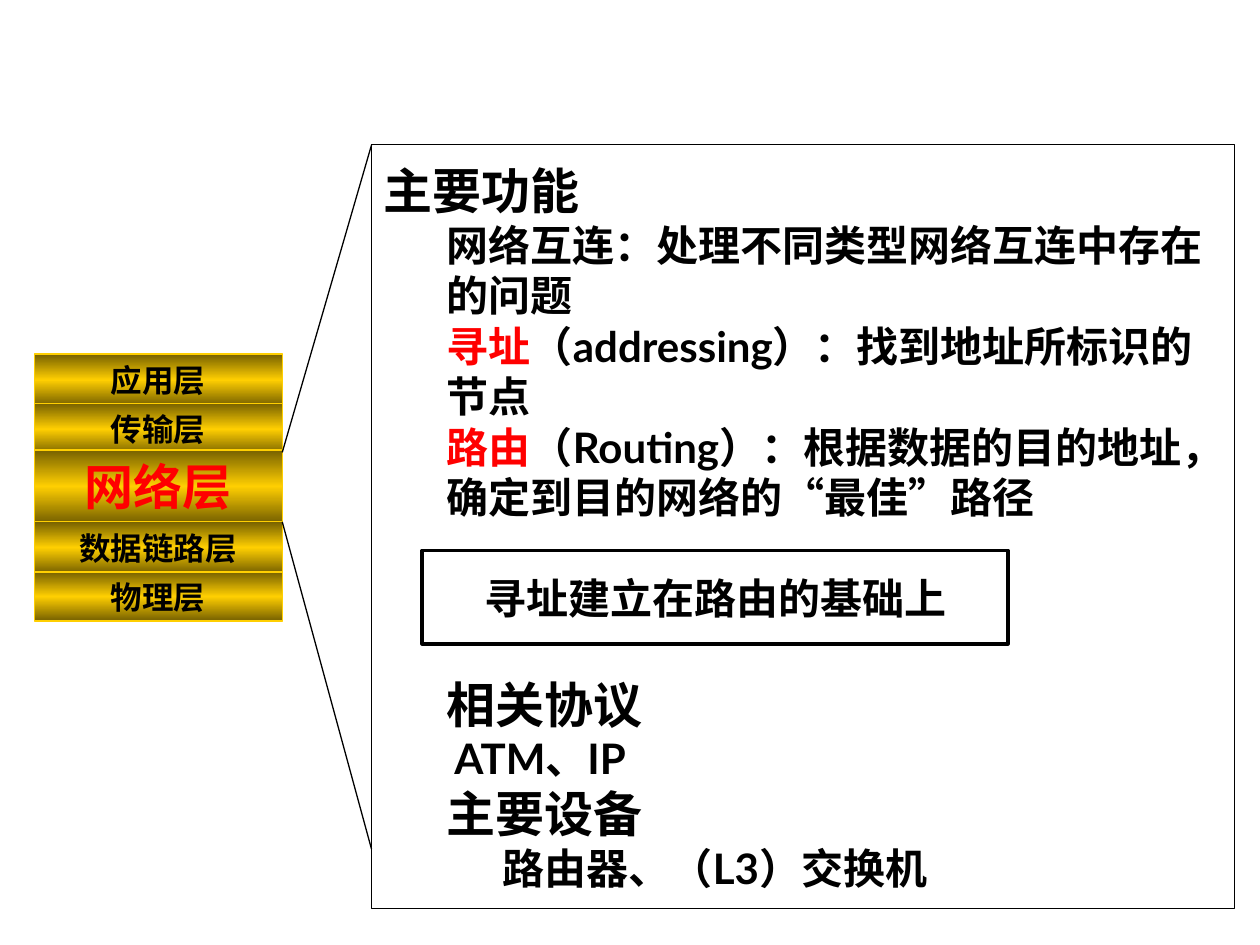
import copy

import pptx
import pptx.dml.color
import pptx.enum.shapes
import pptx.enum.text
import pptx.oxml
import pptx.oxml.ns
import pptx.util

Cm, Pt = pptx.util.Cm, pptx.util.Pt
ALIGN = pptx.enum.text.PP_ALIGN

THEME = {
    "font": "Lato", "quote_font": "Arial",
    "ink": "000000", "accent": "FF0000",
    "gold": "FFCF01", "dark_gold": "766000",
    "label": 18, "body": 24, "heading": 28,
}

# Layer stack: name, top, height (cm), size, colour
STACK_LEFT, STACK_WIDTH = 0.69, 5.0
LAYERS = [
    ("应用层", 7.14, 1.04, "label", "ink"),
    ("传输层", 8.13, 1.04, "label", "ink"),
    ("网络层", 9.07, 1.47, "heading", "accent"),
    ("数据链路层", 10.52, 1.04, "label", "ink"),
    ("物理层", 11.53, 0.99, "label", "ink"),
]

PANEL = (7.49, 2.92, 17.4, 15.39)
CALLOUT = (8.51, 11.1, 11.81, 1.88)
CALLOUT_TEXT = "寻址建立在路由的基础上"
CALLOUT_GAP = 87  # points left free in the panel text

# Panel text: size, indent (cm), space before (pt), runs of (text, colour, font)
DETAILS = [
    ("heading", 0, 0, [("主要功能", "ink", "font")]),
    ("body", 1.27, 0, [("网络互连：处理不同类型网络互连中存在的问题", "ink", "font")]),
    ("body", 1.27, 0, [("寻址", "accent", "font"),
                       ("（addressing）：找到地址所标识的节点", "ink", "font")]),
    ("body", 1.27, 0, [("路由", "accent", "font"),
                       ("（Routing）：根据数据的目的地址，确定到目的网络的", "ink", "font"),
                       ("“", "ink", "quote_font"), ("最佳", "ink", "font"),
                       ("”", "ink", "quote_font"), ("路径", "ink", "font")]),
    ("heading", 1.27, CALLOUT_GAP, [("相关协议", "ink", "font")]),
    ("body", 1.42, 0, [("ATM、IP", "ink", "font")]),
    ("heading", 1.27, 0, [("主要设备", "ink", "font")]),
    ("body", 2.4, 0, [("路由器、（L3）交换机", "ink", "font")]),
]

# Lines from the network layer to the panel: start, end (cm)
ZOOM_LINES = [((5.69, 9.12), (7.49, 2.92)), ((5.69, 10.52), (7.49, 17.12))]


def rgb(key):
    return pptx.dml.color.RGBColor.from_string(THEME[key])


def add_run(p, text, size, color="ink", font="font"):
    r = p.add_run()
    r.text = text
    r.font.name = THEME[font]
    r.font.size = Pt(THEME[size])
    r.font.bold = True
    r.font.color.rgb = rgb(color)


def add_box(slide, box, line_color, line_width):
    s = slide.shapes.add_shape(pptx.enum.shapes.MSO_SHAPE.RECTANGLE, *map(Cm, box))
    s.shadow.inherit = False
    s.fill.background()
    s.line.color.rgb = rgb(line_color)
    s.line.width = Pt(line_width)
    tf = s.text_frame
    tf.word_wrap = True
    tf.vertical_anchor = pptx.enum.text.MSO_ANCHOR.MIDDLE
    return s


def fill_gold(s):
    """Vertical gradient, dark at both edges and bright in the middle."""
    s.fill.gradient()
    s.fill.gradient_angle = 90
    edge, middle = s.fill.gradient_stops
    edge.color.rgb, edge.position = rgb("dark_gold"), 0
    middle.color.rgb, middle.position = rgb("gold"), 0.5
    stops = s._element.spPr.find(".//" + pptx.oxml.ns.qn("a:gsLst"))
    last = copy.deepcopy(stops[0])
    last.set("pos", "100000")
    stops.append(last)


def add_layer(slide, name, top, height, size, color):
    s = add_box(slide, (STACK_LEFT, top, STACK_WIDTH, height), "gold", 0.75)
    fill_gold(s)
    p = s.text_frame.paragraphs[0]
    p.alignment = ALIGN.CENTER
    add_run(p, name, size, color)


def add_panel(slide):
    tf = add_box(slide, PANEL, "ink", 0.75).text_frame
    for i, (size, indent, before, runs) in enumerate(DETAILS):
        p = tf.add_paragraph() if i else tf.paragraphs[0]
        p.alignment = ALIGN.LEFT
        p.space_before = Pt(before)
        p._p.get_or_add_pPr().set("marL", str(Cm(indent)))
        for text, color, font in runs:
            add_run(p, text, size, color, font)


def add_line(slide, start, end):
    c = slide.shapes.add_connector(pptx.enum.shapes.MSO_CONNECTOR.STRAIGHT,
                                   *map(Cm, start + end))
    c.line.color.rgb = rgb("ink")
    c.line.width = Pt(0.75)
    c._element.spPr.append(pptx.oxml.parse_xml(
        "<a:effectLst %s/>" % pptx.oxml.ns.nsdecls("a")))


def main():
    prs = pptx.Presentation()
    prs.slide_width, prs.slide_height = Cm(25.4), Cm(19.05)
    slide = prs.slides.add_slide(prs.slide_layouts[6])
    for layer in LAYERS:
        add_layer(slide, *layer)
    add_panel(slide)
    for start, end in ZOOM_LINES:
        add_line(slide, start, end)
    p = add_box(slide, CALLOUT, "ink", 2).text_frame.paragraphs[0]
    p.alignment = ALIGN.CENTER
    add_run(p, CALLOUT_TEXT, "body")
    prs.save("out.pptx")


if __name__ == "__main__":
    main()
